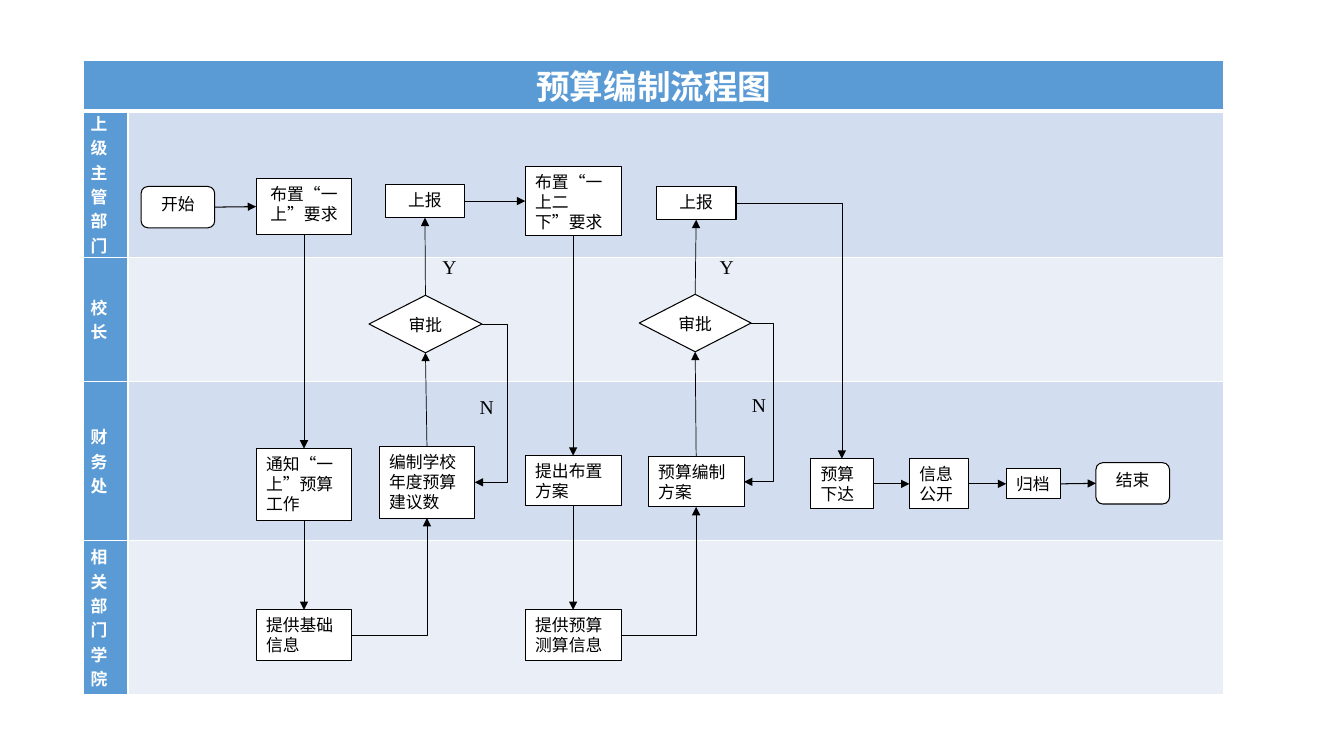
from dataclasses import dataclass

import lxml.etree
import pptx
import pptx.dml.color
import pptx.enum.shapes
import pptx.enum.text
import pptx.oxml.ns
import pptx.util

Inches = pptx.util.Inches
Pt = pptx.util.Pt
Preset = pptx.enum.shapes.MSO_SHAPE
Align = pptx.enum.text.PP_ALIGN
Anchor = pptx.enum.text.MSO_ANCHOR


@dataclass(frozen=True)
class Theme:
    heading_fill: str = "5B9BD5"
    lane_fills: tuple = ("D2DEEF", "EAEFF7")
    white: str = "FFFFFF"
    black: str = "000000"
    title_size: int = 24
    body_size: int = 12
    branch_size: int = 14
    box_line: float = 0.75
    flow_line: float = 0.5
    latin: str = "Calibri"
    serif: str = "Times New Roman"


THEME = Theme()
LANES = [("上级主管部门", 1.39), ("校长", 1.23), ("财务处", 1.58), ("相关部门学院", 1.53)]
TITLE_HEIGHT = 0.5
COLUMN_WIDTHS = (0.44, 10.87)

# Left edges of the main flow columns and the width of their boxes
NOTICE, DRAFT, SECOND, PLAN = 2.54, 3.76, 5.21, 6.43
STEP = 0.95

# key: (text, left, top, width, height, font); these fit their height to the text
TASKS = {
    "notify": ("通知“一上”预算工作", NOTICE, 4.45, STEP, 0.71, THEME.serif),
    "basics": ("提供基础信息", NOTICE, 6.05, STEP, 0.5, THEME.serif),
    "draft": ("编制学校年度预算建议数", DRAFT, 4.43, STEP, 0.71, THEME.serif),
    "layout": ("提出布置方案", SECOND, 4.52, STEP, 0.5, THEME.serif),
    "estimate": ("提供预算测算信息", SECOND, 6.05, STEP, 0.5, THEME.latin),
    "plan": ("预算编制方案", PLAN, 4.53, STEP, 0.5, THEME.serif),
    "issue": ("预算下达", 8.04, 4.55, 0.62, 0.5, THEME.serif),
    "publish": ("信息公开", 9.02, 4.55, 0.59, 0.5, THEME.serif),
    "archive": ("归档", 9.98, 4.65, 0.54, 0.3, THEME.latin),
}

# key: (preset, text, left, top, width, height)
CENTERED = {
    "start": (Preset.FLOWCHART_ALTERNATE_PROCESS, "开始", 1.4, 1.85, 0.73, 0.41),
    "first": (Preset.RECTANGLE, "布置“一上”要求", NOTICE, 1.77, STEP, 0.56),
    "review1": (Preset.DIAMOND, "审批", 3.66, 2.93, 1.12, 0.57),
    "report1": (Preset.RECTANGLE, "上报", 3.82, 1.83, 0.79, 0.33),
    "review2": (Preset.DIAMOND, "审批", 6.34, 2.92, 1.11, 0.57),
    "report2": (Preset.RECTANGLE, "上报", 6.51, 1.85, 0.79, 0.33),
    "end": (Preset.FLOWCHART_ALTERNATE_PROCESS, "结束", 10.87, 4.59, 0.73, 0.41),
}

# Arrows as (from, side, to, side)
STRAIGHT = [
    ("start", "right", "first", "left"),
    ("first", "bottom", "notify", "top"),
    ("notify", "bottom", "basics", "top"),
    ("draft", "top", "review1", "bottom"),
    ("review1", "top", "report1", "bottom"),
    ("report1", "right", "second", "left"),
    ("second", "bottom", "layout", "top"),
    ("layout", "bottom", "estimate", "top"),
    ("plan", "top", "review2", "bottom"),
    ("review2", "top", "report2", "bottom"),
    ("issue", "right", "publish", "left"),
    ("publish", "right", "archive", "left"),
    ("archive", "right", "end", "left"),
]
CORNERS = [
    ("basics", "right", "draft", "bottom"),
    ("estimate", "right", "plan", "bottom"),
    ("report2", "right", "issue", "top"),
]
# Rejections as (from, to, x of the vertical run)
RETURNS = [("review1", "draft", 5.03), ("review2", "plan", 7.67)]
BRANCHES = [("Y", 4.29, 2.48), ("N", 4.66, 3.87), ("Y", 7.04, 2.48), ("N", 7.36, 3.85)]


def color(value):
    return pptx.dml.color.RGBColor.from_string(value)


def write(text_frame, text, size, font, ink, align=None, bold=False):
    text_frame.text = text
    paragraph = text_frame.paragraphs[0]
    paragraph.alignment = align
    run_font = paragraph.runs[0].font
    run_font.size = Pt(size)
    run_font.name = font
    run_font.bold = bold
    run_font.color.rgb = color(ink)


def add_border(cell, side, width):
    line = lxml.etree.SubElement(cell._tc.get_or_add_tcPr(),
                                 pptx.oxml.ns.qn(f"a:ln{side}"), w=str(Pt(width)))
    fill = lxml.etree.SubElement(line, pptx.oxml.ns.qn("a:solidFill"))
    lxml.etree.SubElement(fill, pptx.oxml.ns.qn("a:srgbClr"), val=THEME.white)


def style_cell(cell, fill, bottom=1):
    cell.margin_left = cell.margin_right = Inches(0.07)
    cell.margin_top = cell.margin_bottom = 0
    for side in "LRT":
        add_border(cell, side, 1)
    add_border(cell, "B", bottom)
    cell.fill.solid()
    cell.fill.fore_color.rgb = color(fill)


def add_lanes(slide):
    heights = [TITLE_HEIGHT] + [height for _, height in LANES]
    table = slide.shapes.add_table(len(heights), 2, Inches(0.83), Inches(0.6),
                                   Inches(sum(COLUMN_WIDTHS)), Inches(sum(heights))).table
    table.first_row = table.horz_banding = False
    for column, width in zip(table.columns, COLUMN_WIDTHS):
        column.width = Inches(width)
    for row, height in zip(table.rows, heights):
        row.height = Inches(height)

    title = table.cell(0, 0)
    title.merge(table.cell(0, 1))
    for cell in table.rows[0].cells:
        style_cell(cell, THEME.heading_fill, bottom=3)
    write(title.text_frame, "预算编制流程图", THEME.title_size, THEME.latin,
          THEME.white, Align.CENTER, bold=True)

    for index, (name, _) in enumerate(LANES):
        heading = table.cell(index + 1, 0)
        style_cell(heading, THEME.heading_fill)
        heading.vertical_anchor = Anchor.MIDDLE
        heading._tc.get_or_add_tcPr().set("vert", "eaVert")
        write(heading.text_frame, name, THEME.body_size, THEME.latin,
              THEME.white, Align.JUSTIFY, bold=True)
        style_cell(table.cell(index + 1, 1), THEME.lane_fills[index % 2])


def add_box(slide, preset, text, left, top, width, height, font=THEME.serif,
            align=Align.LEFT, grow=False):
    shape = slide.shapes.add_shape(preset, Inches(left), Inches(top),
                                   Inches(width), Inches(height))
    shape.shadow.inherit = False
    shape.fill.solid()
    shape.fill.fore_color.rgb = color(THEME.white)
    shape.line.color.rgb = color(THEME.black)
    shape.line.width = Pt(THEME.box_line)
    write(shape.text_frame, text, THEME.body_size, font, THEME.black, align)
    shape.text_frame.vertical_anchor = Anchor.TOP
    shape.text_frame.word_wrap = True
    if grow:
        shape.text_frame.auto_size = pptx.enum.text.MSO_AUTO_SIZE.SHAPE_TO_FIT_TEXT
    return shape


def add_branch(slide, text, left, top):
    box = slide.shapes.add_textbox(Inches(left), Inches(top), Inches(0.26), Inches(0.34))
    box.text_frame.word_wrap = True
    write(box.text_frame, text, THEME.branch_size, THEME.serif, THEME.black)


def side_point(shape, side):
    across, down = {"left": (0, 0.5), "right": (1, 0.5),
                    "top": (0.5, 0), "bottom": (0.5, 1)}[side]
    return int(shape.left + across * shape.width), int(shape.top + down * shape.height)


def add_arrow(slide, start, end, preset="line", width=THEME.flow_line, turn_x=None):
    connector = slide.shapes.add_connector(pptx.enum.shapes.MSO_CONNECTOR.STRAIGHT,
                                           *start, *end)
    connector.line.color.rgb = color(THEME.black)
    connector.line.width = Pt(width)
    properties = connector.element.spPr
    lxml.etree.SubElement(properties.find(pptx.oxml.ns.qn("a:ln")),
                          pptx.oxml.ns.qn("a:tailEnd"), type="triangle")
    lxml.etree.SubElement(properties, pptx.oxml.ns.qn("a:effectLst"))
    geometry = properties.find(pptx.oxml.ns.qn("a:prstGeom"))
    geometry.set("prst", preset)
    if turn_x is not None:
        ratio = round(100000 * (turn_x - start[0]) / (end[0] - start[0]))
        lxml.etree.SubElement(geometry.find(pptx.oxml.ns.qn("a:avLst")),
                              pptx.oxml.ns.qn("a:gd"), name="adj1", fmla=f"val {ratio}")


def main():
    presentation = pptx.Presentation()
    presentation.slide_width, presentation.slide_height = Inches(13.33), Inches(7.5)
    slide = presentation.slides.add_slide(presentation.slide_layouts[6])

    # Swimlanes
    add_lanes(slide)

    # Steps
    steps = {key: add_box(slide, *step, align=Align.CENTER) for key, step in CENTERED.items()}
    for key, task in TASKS.items():
        steps[key] = add_box(slide, Preset.RECTANGLE, *task, grow=True)
    steps["second"] = add_box(slide, Preset.RECTANGLE, "布置“一上二下”要求",
                              SECOND, 1.65, STEP, 0.69, THEME.latin)

    # Arrows: those within a lane are heavier
    for source, exit_side, target, entry_side in STRAIGHT:
        width = THEME.box_line if exit_side == "right" else THEME.flow_line
        add_arrow(slide, side_point(steps[source], exit_side),
                  side_point(steps[target], entry_side), width=width)
    for source, exit_side, target, entry_side in CORNERS:
        add_arrow(slide, side_point(steps[source], exit_side),
                  side_point(steps[target], entry_side), "bentConnector2")
    for source, target, turn_x in RETURNS:
        add_arrow(slide, side_point(steps[source], "right"),
                  side_point(steps[target], "right"), "bentConnector3", turn_x=Inches(turn_x))

    # Branch labels
    for branch in BRANCHES:
        add_branch(slide, *branch)

    presentation.save("out.pptx")


if __name__ == "__main__":
    main()
